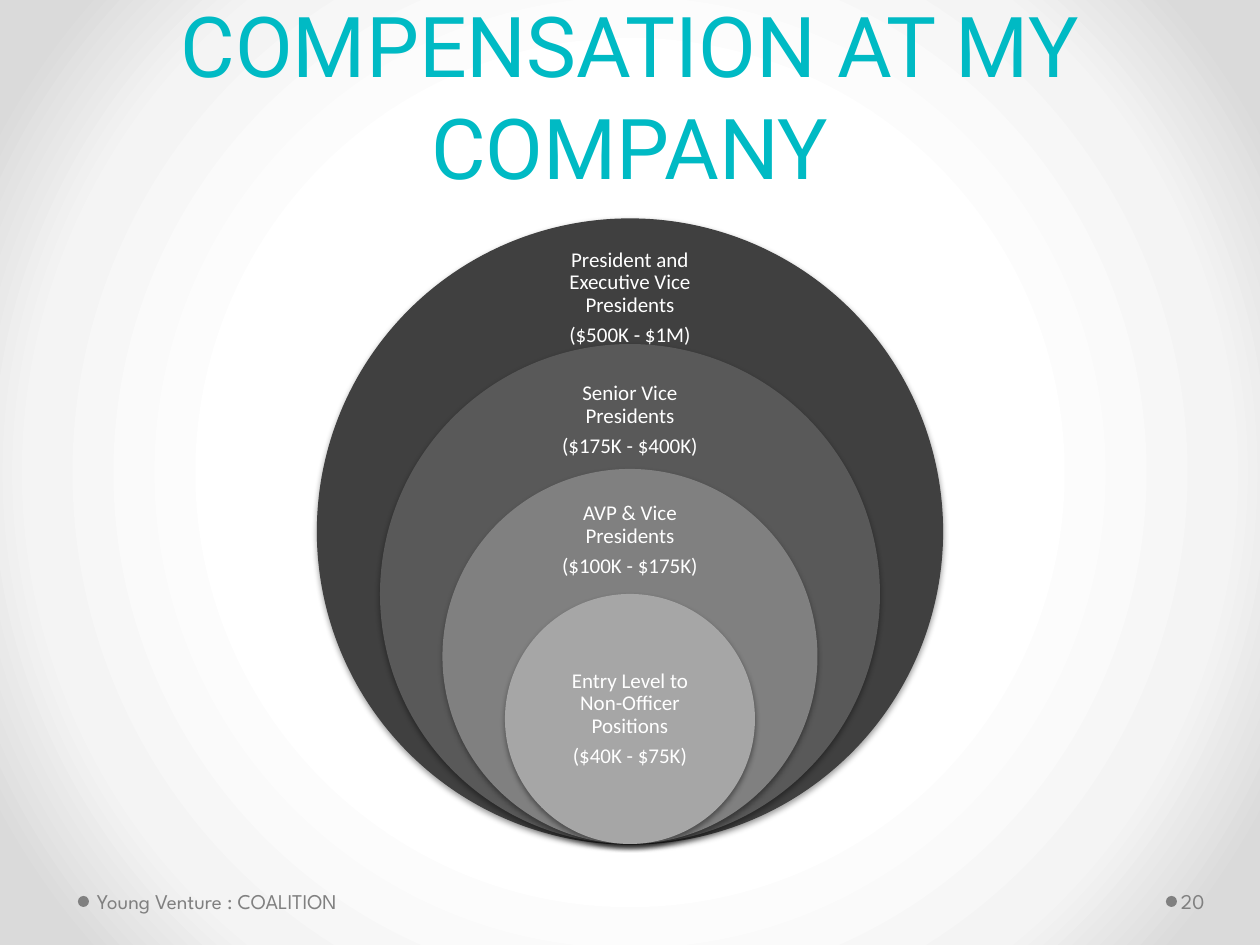
from pptx import Presentation
from pptx.dml.color import RGBColor
from pptx.enum.shapes import MSO_SHAPE
from pptx.enum.text import MSO_ANCHOR, PP_ALIGN
from pptx.oxml import parse_xml
from pptx.oxml.ns import nsdecls, qn
from pptx.util import Pt

PX = 914400 / 126
WIDTH, HEIGHT = 1260, 945
TEAL, GREY, WHITE = "00BAC4", "808080", "FFFFFF"


def emu(px):
    return round(px * PX)


def rgb(value):
    return RGBColor.from_string(value)


class SlideBuilder:
    """Holds the style and the slide being built."""

    body_font = "Calibri"
    title_font = "Roboto"
    footer_font = "League Spartan"
    body_size = 12

    def __init__(self, slide):
        self.slide = slide

    def radial_background(self, stops):
        self.slide.background.fill.solid()
        solid = self.slide.element.find(".//" + qn("a:solidFill"))
        stop_xml = "".join(
            f'<a:gs pos="{place * 1000}"><a:srgbClr val="{color}"/></a:gs>'
            for place, color in stops
        )
        gradient = parse_xml(
            f'<a:gradFill {nsdecls("a")} rotWithShape="1"><a:gsLst>{stop_xml}</a:gsLst>'
            '<a:path path="circle"><a:fillToRect l="50000" t="50000" r="50000" b="50000"/>'
            "</a:path></a:gradFill>"
        )
        solid.getparent().replace(solid, gradient)

    def circle(self, left, top, size, color, outlined=False):
        shape = self.slide.shapes.add_shape(
            MSO_SHAPE.OVAL, emu(left), emu(top), emu(size), emu(size)
        )
        shape.shadow.inherit = False
        shape.fill.solid()
        shape.fill.fore_color.rgb = rgb(color)
        if outlined:
            shape.line.color.rgb = rgb(color)
            shape.line.width = Pt(0.75)
        else:
            shape.line.fill.background()
        return shape

    def soft_shadow(self, shape):
        effects = shape.element.spPr.find(qn("a:effectLst"))
        effects.append(parse_xml(
            f'<a:outerShdw {nsdecls("a")} blurRad="{Pt(3.1)}" dist="{Pt(1.6)}" '
            'dir="5400000" rotWithShape="0"><a:srgbClr val="000000">'
            '<a:alpha val="38000"/></a:srgbClr></a:outerShdw>'
        ))

    def text(self, left, top, width, height, lines, font, color, size=body_size,
             align=PP_ALIGN.CENTER, anchor=MSO_ANCHOR.MIDDLE, margins=(0, 0),
             spacing=1.0, after=0):
        """Add a text box; margins are left and right."""
        box = self.slide.shapes.add_textbox(emu(left), emu(top), emu(width), emu(height))
        frame = box.text_frame
        frame.word_wrap = True
        frame.vertical_anchor = anchor
        frame.margin_left, frame.margin_right = map(emu, margins)
        frame.margin_top = frame.margin_bottom = emu(6)
        for index, line in enumerate(lines):
            para = frame.add_paragraph() if index else frame.paragraphs[0]
            para.alignment = align
            para.line_spacing = spacing
            para.space_after = Pt(after)
            span = para.add_run()
            span.text = line
            span.font.name = font
            span.font.size = Pt(size)
            span.font.color.rgb = rgb(color)

    def title(self, wording):
        self.text(63, 19, 1134, 183, [wording], self.title_font, TEAL, 48,
                  anchor=MSO_ANCHOR.BOTTOM, margins=(13, 13), spacing=Pt(58))

    def level_label(self, middle, lines):
        width, height = 150, 90
        self.text((WIDTH - width) // 2, middle - height // 2, width, height, lines,
                  self.body_font, WHITE, spacing=0.9, after=4.2)

    def footer(self, dot_left, left, width, wording, margins):
        self.circle(dot_left, 896, 11, GREY)
        self.text(left, 876, width, 50, [wording], self.footer_font, GREY,
                  align=PP_ALIGN.LEFT, margins=margins)


def main():
    deck = Presentation()
    deck.slide_width, deck.slide_height = emu(WIDTH), emu(HEIGHT)
    page = SlideBuilder(deck.slides.add_slide(deck.slide_layouts[6]))

    page.radial_background([(50, "FFFFFF"), (76, "F4F4F4"), (92, "DADADA")])
    page.title("COMPENSATION AT MY COMPANY")

    levels = [
        ("404040", 298, "President and Executive Vice Presidents", "($500K - $1M)"),
        ("595959", 420, "Senior Vice Presidents", "($175K - $400K)"),
        ("808080", 540, "AVP & Vice Presidents", "($100K - $175K)"),
        ("A6A6A6", 719, "Entry Level to Non-Officer Positions", "($40K - $75K)"),
    ]
    ring_step, circles_bottom = 125, 844
    for index, (color, middle, *lines) in enumerate(levels):
        size = ring_step * (5 - index)
        disc = page.circle((WIDTH - size) / 2, circles_bottom - size, size, color,
                           outlined=index == 0)
        page.soft_shadow(disc)
        page.level_label(middle, lines)

    page.footer(78, 91, 392, "Young Venture : COALITION", (6, 13))
    page.footer(1166, 1177, 77, "20", (4, 6))
    deck.save("out.pptx")


if __name__ == "__main__":
    main()
